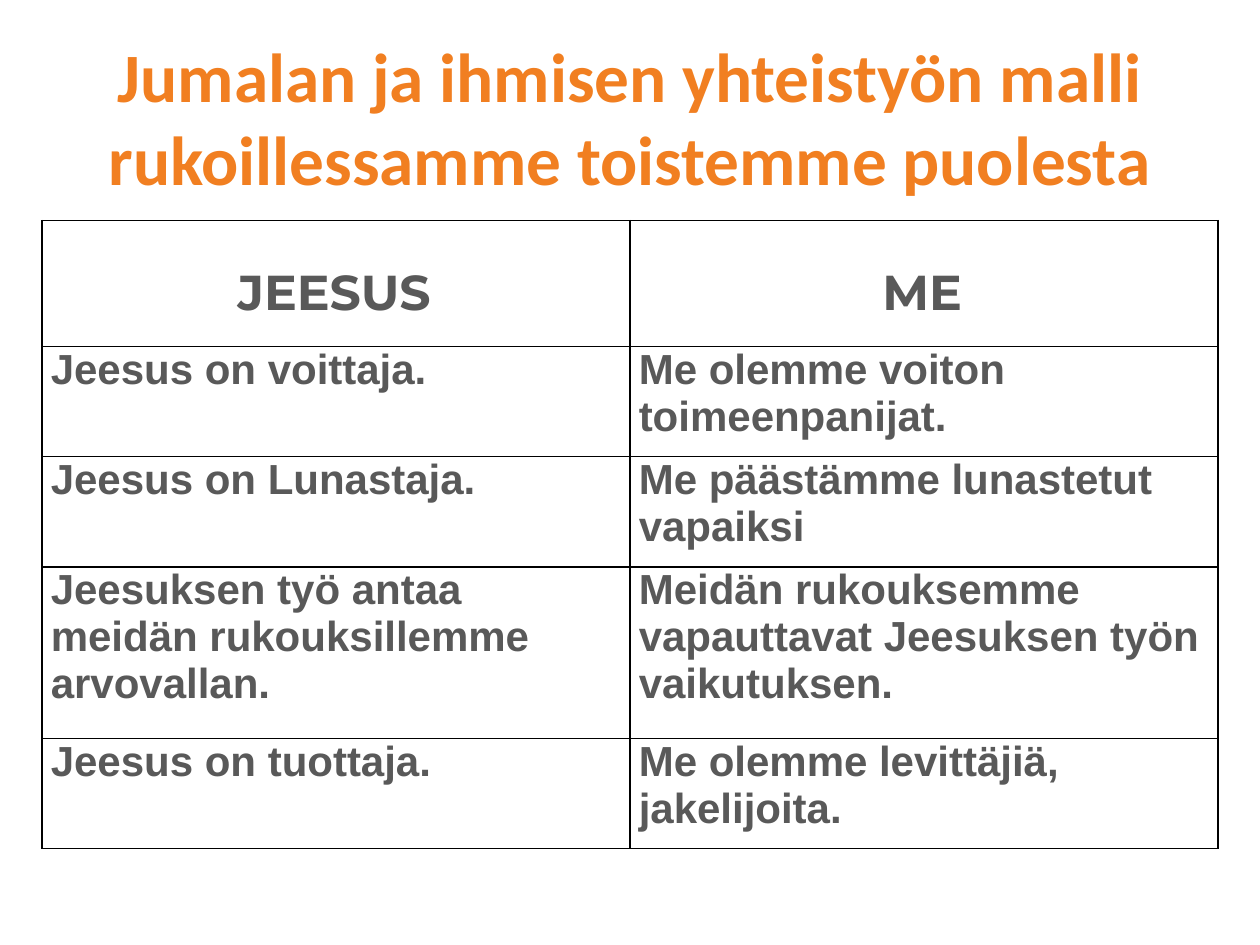
from lxml import etree
from pptx import Presentation
from pptx import util as u
from pptx.dml.color import RGBColor
from pptx.enum import text
from pptx.oxml import ns

COLORS = {"title": "F17F21", "body": "595959", "border": "000000", "paper": "FFFFFF"}
FORMATS = {
    "title": {"name": "Calibri", "size": u.Pt(39.6), "bold": True},
    "header": {"name": "Montserrat", "size": u.Pt(28), "bold": True},
    "body": {"name": "Arial", "size": u.Pt(24), "bold": True},
}
INSETS = {"margin_left": 0.07, "margin_right": 0.1, "margin_top": 0, "margin_bottom": 0}
HEADER_DROP = 0.34
ROW_HEIGHTS = [4, 3.5, 3.5, 5.44, 3.5]
ROWS = [
    ("JEESUS", "ME"),
    ("Jeesus on voittaja.", "Me olemme voiton toimeenpanijat."),
    ("Jeesus on Lunastaja.", "Me päästämme lunastetut vapaiksi"),
    ("Jeesuksen työ antaa meidän rukouksillemme arvovallan.",
     "Meidän rukouksemme vapauttavat Jeesuksen työn vaikutuksen."),
    ("Jeesus on tuottaja.", "Me olemme levittäjiä, jakelijoita."),
]


class SlideBuilder:
    """Builds slides on a grid of 30 columns by 30 rows."""

    def __init__(self, deck):
        self.deck = deck
        self.column = deck.slide_width / 30
        self.row = deck.slide_height / 30
        self.slide = deck.slides.add_slide(deck.slide_layouts[5])

    def area(self, left, top, width, height):
        return [int(left * self.column), int(top * self.row),
                int(width * self.column), int(height * self.row)]

    def set_words(self, frame, words, style, color, align):
        frame.text = words
        para = frame.paragraphs[0]
        para.alignment = align
        span = para.runs[0]
        for name, value in FORMATS[style].items():
            setattr(span.font, name, value)
        span.font.color.rgb = RGBColor.from_string(COLORS[color])

    def title(self, words, *place):
        box = self.slide.shapes.title
        for name, value in zip(("left", "top", "width", "height"), self.area(*place)):
            setattr(box, name, value)
        box.text_frame.vertical_anchor = text.MSO_ANCHOR.MIDDLE
        self.set_words(box.text_frame, words, "title", "title", text.PP_ALIGN.CENTER)

    def borders(self, cell):
        properties = cell._tc.get_or_add_tcPr()
        for index, side in enumerate(("lnL", "lnR", "lnT", "lnB")):
            line = etree.Element(ns.qn(f"a:{side}"), w=str(u.Pt(1)))
            fill = etree.SubElement(line, ns.qn("a:solidFill"))
            etree.SubElement(fill, ns.qn("a:srgbClr"), val=COLORS["border"])
            properties.insert(index, line)

    def table(self, rows, heights, left, top, width):
        place = self.area(left, top, width, sum(heights))
        grid = self.slide.shapes.add_table(len(rows), len(rows[0]), *place).table
        grid.horz_banding = False
        for number, (words, height) in enumerate(zip(rows, heights)):
            grid.rows[number].height = int(height * self.row)
            header = number == 0
            for cell, content in zip(grid.rows[number].cells, words):
                for name, value in INSETS.items():
                    setattr(cell, name, u.Inches(value))
                if header:
                    cell.margin_top = u.Inches(HEADER_DROP)
                cell.fill.solid()
                cell.fill.fore_color.rgb = RGBColor.from_string(COLORS["paper"])
                self.borders(cell)
                self.set_words(cell.text_frame, content, "header" if header else "body", "body",
                               text.PP_ALIGN.CENTER if header else text.PP_ALIGN.LEFT)


def main():
    deck = Presentation()
    deck.slide_width, deck.slide_height = u.Inches(10), u.Inches(7.5)
    builder = SlideBuilder(deck)
    builder.title("Jumalan ja ihmisen yhteistyön malli rukoillessamme toistemme puolesta",
                  1.5, 1.2, 27, 5)
    builder.table(ROWS, ROW_HEIGHTS, 1, 7, 28)
    deck.save("out.pptx")


if __name__ == "__main__":
    main()
